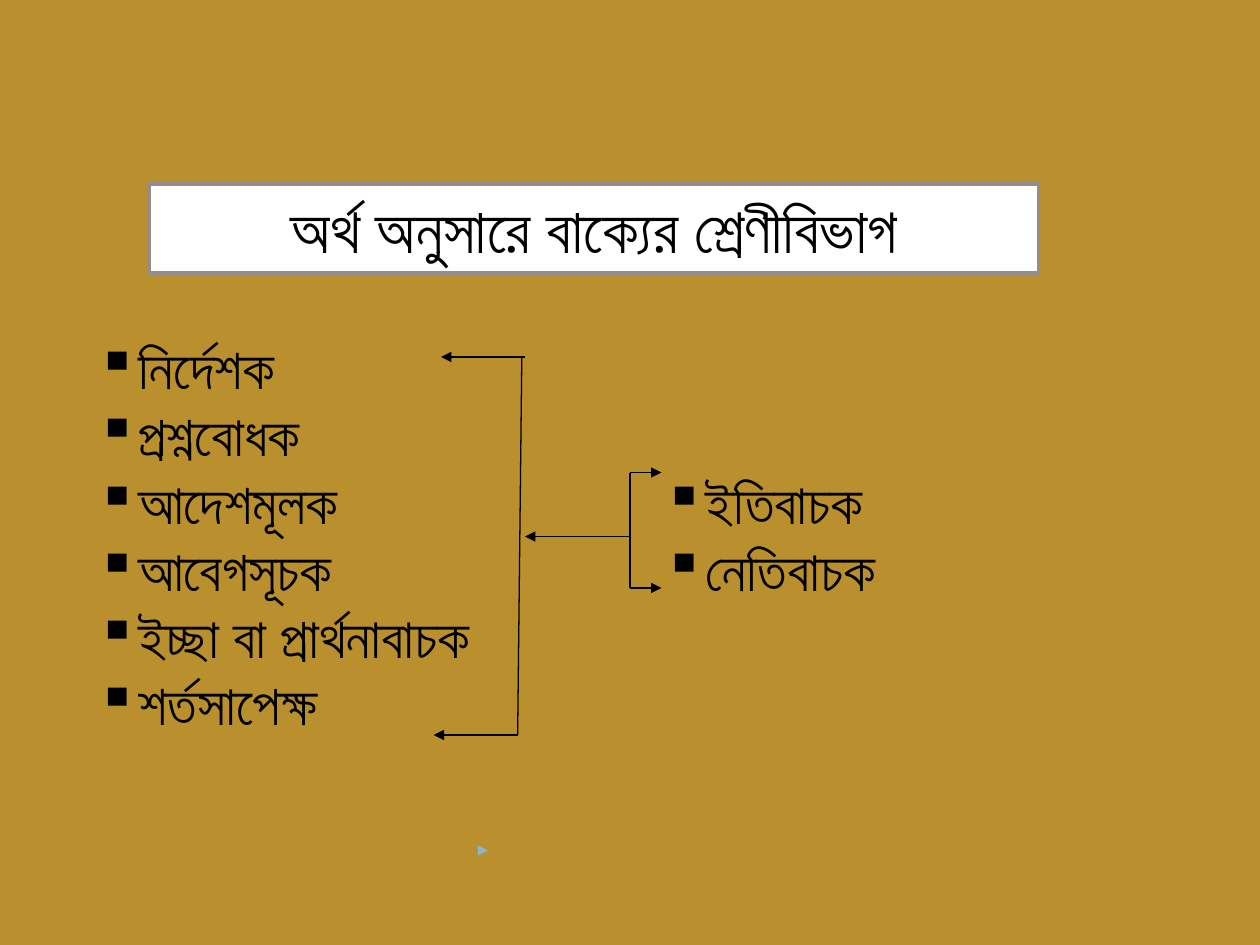
from lxml import etree
from pptx import Presentation
from pptx.dml.color import RGBColor
from pptx.enum.shapes import MSO_CONNECTOR, MSO_SHAPE
from pptx.enum.text import MSO_ANCHOR, MSO_AUTO_SIZE, PP_ALIGN
from pptx.oxml.ns import qn
from pptx.util import Inches, Pt

STRAIGHT, PROCESS = MSO_CONNECTOR.STRAIGHT, MSO_SHAPE.FLOWCHART_PROCESS
MIDDLE, CENTER = MSO_ANCHOR.MIDDLE, PP_ALIGN.CENTER
GROW = MSO_AUTO_SIZE.SHAPE_TO_FIT_TEXT

THEME = {
    "back": "BA8F2D", "panel": "FFFFFF", "edge": "968C8C",
    "ink": "000000", "accent": "8FB2CF", "font": "Arial",
    "title": 36, "item": 32, "border": 2, "rule": 0.75,
}

# Places are in cells of a grid of 120 columns by 90 rows.
COLS, ROWS = 120, 90
WIDTH, HEIGHT = Inches(10), Inches(7.5)

TITLE = ("অর্থ অনুসারে বাক্যের শ্রেণীবিভাগ", (14.2, 17.5, 84.7, 8.5))
LISTS = [
    (["নির্দেশক", "প্রশ্নবোধক", "আদেশমূলক", "আবেগসূচক",
      "ইচ্ছা বা প্রার্থনাবাচক", "শর্তসাপেক্ষ"], (8, 31.2, 42, 39.6)),
    (["ইতিবাচক", "নেতিবাচক"], (62, 44, 29, 14.2)),
]
INDENT = Inches(0.31)

TOP, END = 34, 70            # rows of the left bracket
HIGH, MID, LOW = 45, 51.1, 56  # rows of the right bracket
STEM = 60
RULES = [((49.7, TOP), (49.3, END)), ((STEM, HIGH), (STEM, LOW))]
ARROWS = [
    ((50, TOP), (42, TOP)),
    ((49.3, END), (41.3, END)),
    ((STEM, MID), (50, MID)),
    ((STEM, HIGH), (63, HIGH)),
    ((STEM, LOW), (63, LOW)),
]
MARK = ((45.5, 81), (46.5, 81))


def color(name):
    return RGBColor.from_string(THEME[name])


def place(*cells):
    """Turn alternating column and row counts into slide lengths."""
    units = (WIDTH / COLS, HEIGHT / ROWS)
    return [round(cell * units[i % 2]) for i, cell in enumerate(cells)]


def write(para, text, size):
    run = para.add_run()
    run.text = text
    form = {"name": THEME["font"], "size": Pt(THEME[size])}
    for key, value in form.items():
        setattr(run.font, key, value)
    run.font.color.rgb = color("ink")


def add_title(slide, text, box):
    shape = slide.shapes.add_shape(PROCESS, *place(*box))
    shape.shadow.inherit = False
    shape.fill.solid()
    shape.fill.fore_color.rgb = color("panel")
    shape.line.color.rgb = color("edge")
    shape.line.width = Pt(THEME["border"])
    frame = shape.text_frame
    frame.vertical_anchor = MIDDLE
    frame.paragraphs[0].alignment = CENTER
    write(frame.paragraphs[0], text, "title")


def add_list(slide, items, box):
    frame = slide.shapes.add_textbox(*place(*box)).text_frame
    for key, value in {"word_wrap": True, "auto_size": GROW}.items():
        setattr(frame, key, value)
    for i, item in enumerate(items):
        para = frame.add_paragraph() if i else frame.paragraphs[0]
        props = para._p.get_or_add_pPr()
        props.set("marL", str(INDENT))
        props.set("indent", str(-INDENT))
        etree.SubElement(props, qn("a:buChar"), char="▪")
        write(para, item, "item")


def add_line(slide, start, end, tone="ink", arrow=False):
    line = slide.shapes.add_connector(STRAIGHT, *place(*start, *end))
    line.line.color.rgb = color(tone)
    line.line.width = Pt(THEME["rule"])
    if arrow:
        stroke = line.line._get_or_add_ln()
        etree.SubElement(stroke, qn("a:tailEnd"), type="triangle")
    etree.SubElement(line._element.spPr, qn("a:effectLst"))


def main():
    deck = Presentation()
    deck.slide_width, deck.slide_height = WIDTH, HEIGHT
    slide = deck.slides.add_slide(deck.slide_layouts[6])
    slide.background.fill.solid()
    slide.background.fill.fore_color.rgb = color("back")

    add_title(slide, *TITLE)
    add_line(slide, *MARK, tone="accent", arrow=True)
    for items, box in LISTS:
        add_list(slide, items, box)
    for ends in RULES:
        add_line(slide, *ends)
    for ends in ARROWS:
        add_line(slide, *ends, arrow=True)
    deck.save("out.pptx")


if __name__ == "__main__":
    main()
